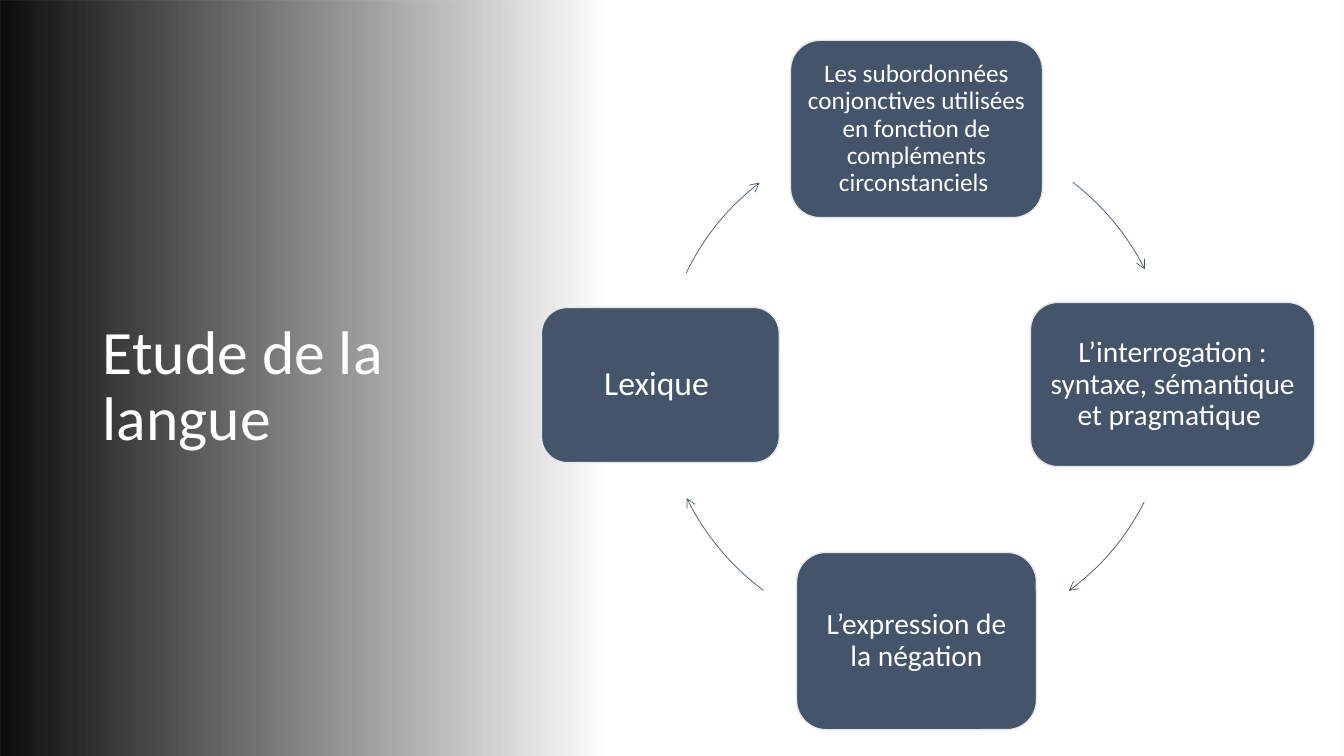
from lxml.etree import SubElement
from pptx import Presentation
from pptx.dml.color import RGBColor
from pptx.enum.shapes import MSO_SHAPE
from pptx.enum.text import MSO_ANCHOR, PP_ALIGN
from pptx.oxml.ns import qn
from pptx.util import Inches, Pt

COLORS = {"shade": "0D0D0D", "slate": "44546A", "edge": "E7E6E6", "white": "FFFFFF"}
FONT = "Calibri"
CYCLE = (6.55, 1.28, 5.08, 5.08)
TOPICS = [
    ((7.84, 0.4, 2.5, 1.76), 18, 0.07,
     "Les subordonnées conjonctives utilisées en fonction de compléments circonstanciels "),
    ((10.22, 3, 2.82, 1.63), 21, 0.09, "L’interrogation : syntaxe, sémantique et pragmatique "),
    ((7.9, 5.48, 2.38, 1.76), 21, 0.09, "L’expression de la négation"),
    ((5.37, 3.05, 2.36, 1.54), 24, 0.1, "Lexique "),
]
ARROW_ANGLES = [(307.6, 333.1), (27.2, 53.5), (126.7, 153.8), (206, 232.2)]


def color(name):
    return RGBColor.from_string(COLORS[name])


class SlideBuilder:
    """Holds the style and the current slide, and draws each kind of element."""

    def __init__(self, prs):
        self.s = prs.slides.add_slide(prs.slide_layouts[5])

    def shape(self, kind, box):
        sp = self.s.shapes.add_shape(kind, *map(Inches, box))
        sp.shadow.inherit = False
        return sp

    def text(self, tf, text, size, align):
        tf.word_wrap = True
        tf.vertical_anchor = MSO_ANCHOR.MIDDLE
        p = tf.paragraphs[0]
        p.text = text
        p.alignment = align
        p.line_spacing = 0.9
        p.font.name, p.font.size = FONT, Pt(size)
        p.font.color.rgb = color("white")

    def fade(self, box, end):
        sp = self.shape(MSO_SHAPE.RECTANGLE, box)
        sp.line.fill.background()
        sp.fill.gradient()
        sp.fill.gradient_angle = 0
        for stop, position in zip(sp.fill.gradient_stops, (0, end)):
            stop.color.rgb = color("shade")
            stop.position = position
        last_color = sp._element.findall(".//" + qn("a:srgbClr"))[-1]
        SubElement(last_color, qn("a:alpha"), val="0")
        self.s.shapes._spTree.insert(2, sp._element)

    def title(self, text, box):
        sp = self.s.shapes.title
        sp.left, sp.top, sp.width, sp.height = map(Inches, box)
        self.text(sp.text_frame, text, 44, PP_ALIGN.LEFT)

    def topic(self, box, size, inset, text):
        sp = self.shape(MSO_SHAPE.ROUNDED_RECTANGLE, box)
        sp.fill.solid()
        sp.fill.fore_color.rgb = color("slate")
        sp.line.color.rgb = color("edge")
        sp.line.width = Pt(1)
        tf = sp.text_frame
        tf.margin_left = tf.margin_right = tf.margin_top = tf.margin_bottom = Inches(inset)
        self.text(tf, text, size, PP_ALIGN.CENTER)

    def arc_arrow(self, box, start, end):
        sp = self.shape(MSO_SHAPE.ARC, box)
        for i, degrees in enumerate((start, end)):
            sp.adjustments[i] = degrees * 0.6
        sp.fill.background()
        sp.line.color.rgb = color("slate")
        sp.line.width = Pt(0.5)
        SubElement(sp.line._get_or_add_ln(), qn("a:tailEnd"), type="arrow")


def main():
    prs = Presentation()
    prs.slide_width, prs.slide_height = Inches(13.33), Inches(7.5)
    b = SlideBuilder(prs)
    b.fade((0, 0, 13.33, 7.5), 0.45)
    b.title("Etude de la langue", (0.92, 0.89, 3.65, 5.91))
    for topic, angles in zip(TOPICS, ARROW_ANGLES):
        b.topic(*topic)
        b.arc_arrow(CYCLE, *angles)
    prs.save("out.pptx")


if __name__ == "__main__":
    main()
